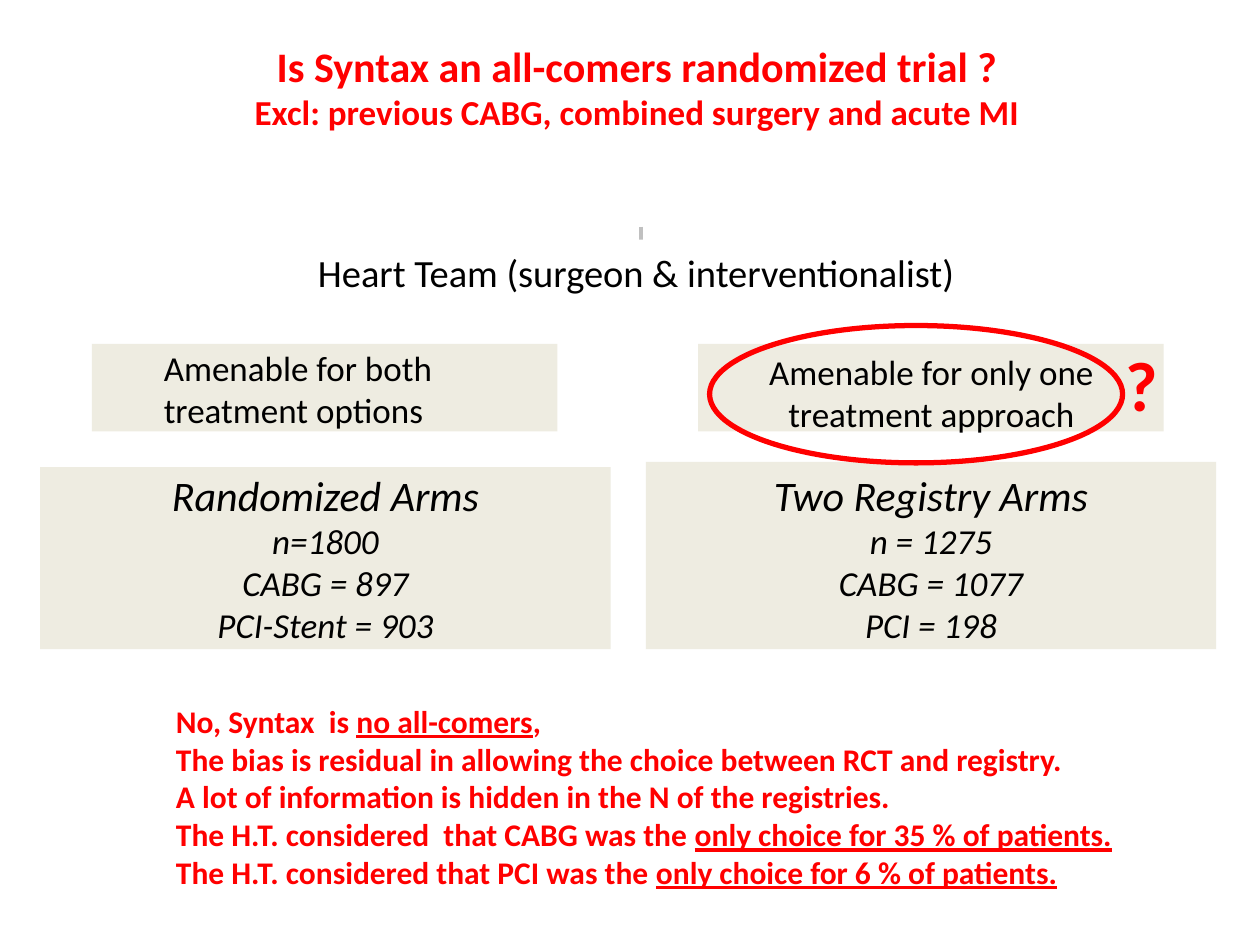
from lxml import etree
from pptx import Presentation
from pptx.dml.color import RGBColor
from pptx.enum.shapes import MSO_CONNECTOR, MSO_SHAPE
from pptx.enum.text import MSO_ANCHOR, PP_ALIGN
from pptx.oxml.ns import qn
from pptx.util import Pt

RECTANGLE, OVAL = MSO_SHAPE.RECTANGLE, MSO_SHAPE.OVAL
STRAIGHT = MSO_CONNECTOR.STRAIGHT
TOP, MIDDLE = MSO_ANCHOR.TOP, MSO_ANCHOR.MIDDLE
LEFT, CENTER = PP_ALIGN.LEFT, PP_ALIGN.CENTER

RED = RGBColor(0xFF, 0x00, 0x00)
BLACK = RGBColor(0x00, 0x00, 0x00)
WHITE = RGBColor(0xFF, 0xFF, 0xFF)
BEIGE = RGBColor(0xEE, 0xEC, 0xE1)
GRAY = RGBColor(0xC0, 0xC0, 0xC0)
FONT = "Calibri"


def add_run(paragraph, text, size, color=BLACK, bold=False, italic=False,
            underline=False):
    run = paragraph.add_run()
    run.text = text
    font = run.font
    font.name, font.size, font.color.rgb = FONT, Pt(size), color
    font.bold, font.italic, font.underline = bold, italic, underline


def add_text(slide, box, lines, align=LEFT, anchor=TOP, wrap=True):
    """Place lines, each a list of (text, size, formatting) runs."""
    frame = slide.shapes.add_textbox(*map(Pt, box)).text_frame
    frame.word_wrap = wrap
    frame.vertical_anchor = anchor
    for index, runs in enumerate(lines):
        paragraph = frame.add_paragraph() if index else frame.paragraphs[0]
        paragraph.alignment = align
        for text, size, formatting in runs:
            add_run(paragraph, text, size, **formatting)


def add_panel(slide, box, color):
    panel = slide.shapes.add_shape(RECTANGLE, *map(Pt, box))
    panel.shadow.inherit = False
    panel.fill.solid()
    panel.fill.fore_color.rgb = color
    panel.line.fill.background()


def add_title(slide, box):
    title = slide.shapes.title
    title.left, title.top, title.width, title.height = map(Pt, box)
    title.text_frame.vertical_anchor = MIDDLE
    paragraph = title.text_frame.paragraphs[0]
    paragraph.alignment = CENTER
    add_run(paragraph, "Is Syntax an all-comers randomized trial ?", 24, RED, True)
    paragraph.add_line_break()
    add_run(paragraph, "Excl: previous CABG, combined surgery and acute MI",
            20, RED, True)


def add_heart_team(slide, box):
    """Place the team label, with an arrow that runs in behind it."""
    left, top, width, height = box
    arrow = slide.shapes.add_connector(
        STRAIGHT, Pt(366.5), Pt(top - 7.5), Pt(366.5), Pt(top + 15))
    arrow.line.color.rgb = GRAY
    arrow.line.width = Pt(2.25)
    line = arrow.line._get_or_add_ln()
    etree.SubElement(line, qn("a:tailEnd"), type="arrow")
    etree.SubElement(arrow._element.spPr, qn("a:effectLst"))
    add_panel(slide, box, WHITE)
    add_text(slide, (left - 3, top + 2, width + 6, height - 4),
             [[("Heart Team (surgeon & interventionalist)", 22, {})]],
             CENTER, MIDDLE)


def add_arm(slide, box, heading, counts):
    left, top, width, height = box
    add_panel(slide, box, BEIGE)
    italic = {"italic": True}
    lines = [[(heading, 24, italic)]] + [[(count, 20, italic)] for count in counts]
    add_text(slide, (left, 264, width, 109), lines, CENTER, MIDDLE)


def add_option(slide, panel_box, text_box, lines, align, wrap):
    add_panel(slide, panel_box, BEIGE)
    add_text(slide, text_box, [[(line, 20, {})] for line in lines], align, wrap=wrap)


def add_doubt(slide, box):
    """Ring the questionable option and put a question mark beside it."""
    left, top, width, height = box
    ring = slide.shapes.add_shape(OVAL, *map(Pt, box))
    ring.shadow.inherit = False
    ring.fill.background()
    ring.line.color.rgb = RED
    ring.line.width = Pt(3)
    add_text(slide, (left + width - 5.5, top + 5.5, 33, 55),
             [[("?", 40, {"color": RED, "bold": True})]], wrap=False)


def add_conclusion(slide, box):
    plain = {"color": RED, "bold": True}
    underlined = {**plain, "underline": True}
    lines = [
        [("No, Syntax  is ", 18, plain), ("no all-comers", 18, underlined),
         (",", 18, plain)],
        [("The bias is residual in allowing the choice between RCT and registry.",
          18, plain)],
        [("A lot of information is hidden in the N of the registries.", 18, plain)],
        [("The H.T. considered  that CABG was the ", 18, plain),
         ("only choice for 35 % of patients.", 18, underlined)],
        [("The H.T. considered that PCI was the ", 18, plain),
         ("only choice for 6 % of patients.", 18, underlined)],
    ]
    add_text(slide, box, lines, wrap=False)


def main():
    presentation = Presentation()
    presentation.slide_width, presentation.slide_height = Pt(720), Pt(540)
    slide = presentation.slides.add_slide(presentation.slide_layouts[5])

    add_title(slide, (96, 32, 536, 35))
    add_heart_team(slide, (139, 137, 449, 37))
    add_arm(slide, (23, 267, 326, 104), "Randomized Arms",
            ["n=1800", "CABG = 897", "PCI-Stent = 903"])
    add_arm(slide, (369, 264, 326, 107), "Two Registry Arms",
            ["n = 1275", "CABG = 1077", "PCI = 198"])
    add_option(slide, (52.5, 196.5, 266, 50), (86.5, 194.5, 198, 55),
               ["Amenable for both", "treatment options"], LEFT, False)
    add_option(slide, (399, 196.5, 266, 50), (398, 197, 268.5, 55),
               ["Amenable for only one treatment approach"], CENTER, True)
    add_conclusion(slide, (93.5, 397.5, 553.5, 116.5))
    add_doubt(slide, (405.5, 186, 236, 78.5))

    presentation.save("out.pptx")


if __name__ == "__main__":
    main()
